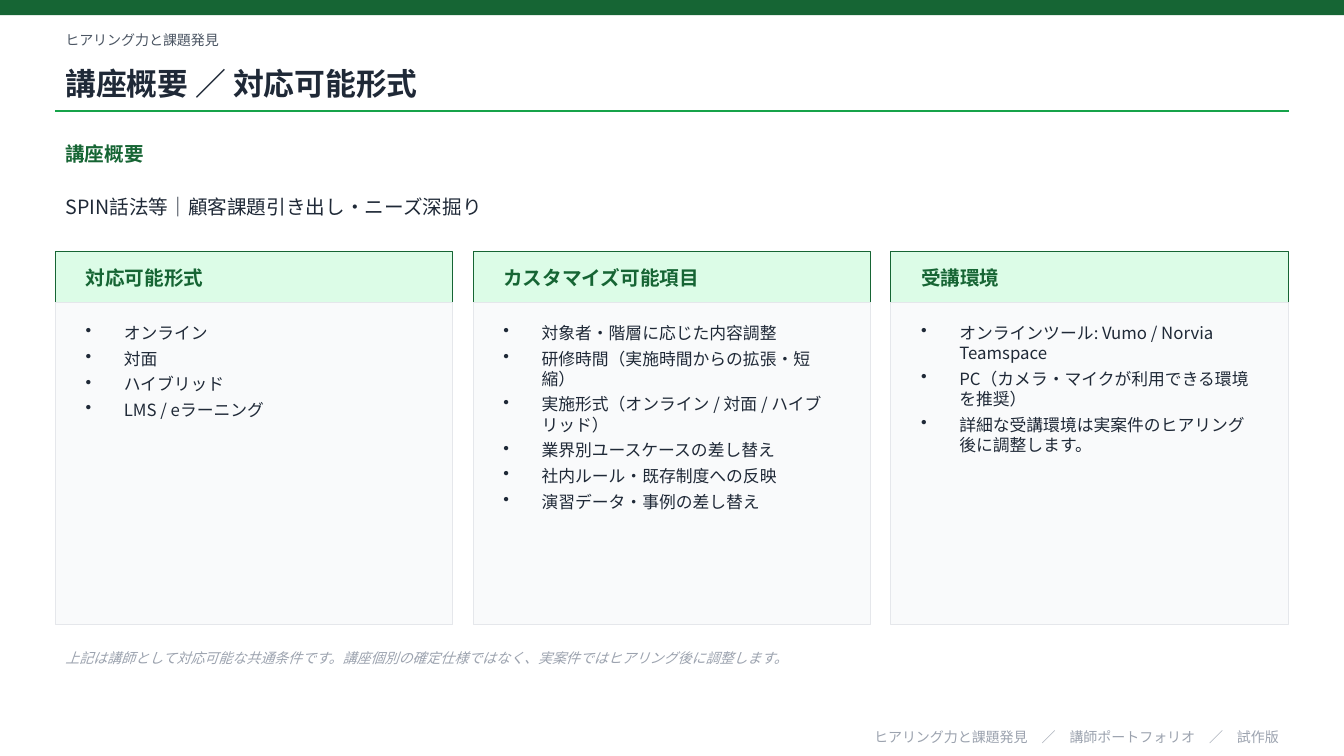
from lxml.etree import SubElement
from pptx import Presentation
from pptx.dml.color import RGBColor
from pptx.enum.shapes import MSO_CONNECTOR as Connector, MSO_SHAPE as Shape
from pptx.enum.text import MSO_ANCHOR as Anchor, PP_ALIGN as Align
from pptx.oxml.ns import qn
from pptx.util import Inches, Pt

DARK_GREEN = RGBColor(0x16, 0x65, 0x34)
GREEN = RGBColor(0x16, 0xA3, 0x4A)
PALE_GREEN = RGBColor(0xDC, 0xFC, 0xE7)
INK = RGBColor(0x1F, 0x29, 0x37)
SLATE = RGBColor(0x4B, 0x55, 0x63)
GRAY = RGBColor(0x9C, 0xA3, 0xAF)
BORDER = RGBColor(0xE5, 0xE7, 0xEB)
PANEL = RGBColor(0xF9, 0xFA, 0xFB)

FONT = "Noto Sans CJK JP"
COLUMNS = 3
MARGIN, GUTTER = Inches(0.55), Inches(0.2)
ROW = Inches(0.05)
CARD_PADDING = Inches(0.2)
BULLET_INDENT = Inches(0.38)

CARDS = [
    ("対応可能形式", ["オンライン", "対面", "ハイブリッド", "LMS / eラーニング"]),
    ("カスタマイズ可能項目", [
        "対象者・階層に応じた内容調整",
        "研修時間（実施時間からの拡張・短縮）",
        "実施形式（オンライン / 対面 / ハイブリッド）",
        "業界別ユースケースの差し替え",
        "社内ルール・既存制度への反映",
        "演習データ・事例の差し替え",
    ]),
    ("受講環境", [
        "オンラインツール: Vumo / Norvia Teamspace",
        "PC（カメラ・マイクが利用できる環境を推奨）",
        "詳細な受講環境は実案件のヒアリング後に調整します。",
    ]),
]


class CourseSlide:
    """Places elements on a grid of three columns and 0.05-inch rows."""

    def __init__(self, deck):
        self.page = deck.slides.add_slide(deck.slide_layouts[6])
        self.width = deck.slide_width
        content = self.width - 2 * MARGIN
        self.column = (content - (COLUMNS - 1) * GUTTER) // COLUMNS

    def area(self, column, row, span, rows, padding=0):
        left = MARGIN + column * (self.column + GUTTER) + padding
        width = span * self.column + (span - 1) * GUTTER - 2 * padding
        return left, int(row * ROW), width, int(rows * ROW)

    def rectangle(self, area, fill, line=None):
        shape = self.page.shapes.add_shape(Shape.RECTANGLE, *area)
        shape.shadow.inherit = False
        shape.fill.solid()
        shape.fill.fore_color.rgb = fill
        if line is None:
            shape.line.fill.background()
        else:
            shape.line.color.rgb = line
            shape.line.width = Pt(0.75)

    def top_bar(self, rows):
        self.rectangle((0, 0, self.width, rows * ROW), DARK_GREEN)

    def rule(self, row):
        left, top, width, _ = self.area(0, row, COLUMNS, 0)
        line = self.page.shapes.add_connector(
            Connector.STRAIGHT, left, top, left + width, top)
        line.line.color.rgb = GREEN
        line.line.width = Pt(1)
        SubElement(line._element.spPr, qn("a:effectLst"))

    def text(self, area, lines, size, color, bold=False, italic=False,
             align=None, anchor=Anchor.MIDDLE, bullets=False):
        frame = self.page.shapes.add_textbox(*area).text_frame
        frame.word_wrap = True
        frame.vertical_anchor = anchor
        frame.text = "\n".join(lines)
        for para in frame.paragraphs:
            if align is not None:
                para.alignment = align
            if bullets:
                self.bullet(para)
            para.font.size = Pt(size)
            para.font.bold = bold
            para.font.italic = italic
            para.font.color.rgb = color
            para.font.name = FONT
            style = para._p.pPr.find(qn("a:defRPr"))
            SubElement(style, qn("a:ea"), typeface=FONT)

    def bullet(self, para):
        para.space_after = Pt(4)
        properties = para._p.get_or_add_pPr()
        properties.set("marL", str(BULLET_INDENT))
        properties.set("indent", str(-BULLET_INDENT))
        SubElement(properties, qn("a:buChar"), char="•")

    def band(self, row, rows, line, size, color, **style):
        """Text across all columns."""
        self.text(self.area(0, row, COLUMNS, rows), [line], size, color, **style)

    def card(self, column, heading, items):
        self.rectangle(self.area(column, 50, 1, 10), PALE_GREEN, DARK_GREEN)
        self.text(self.area(column, 50, 1, 10, CARD_PADDING), [heading],
                  14, DARK_GREEN, bold=True)
        self.rectangle(self.area(column, 60, 1, 64), PANEL, BORDER)
        self.text(self.area(column, 63, 1, 57, CARD_PADDING), items,
                  12, INK, anchor=Anchor.TOP, bullets=True)


def main():
    deck = Presentation()
    deck.slide_width, deck.slide_height = Inches(13.33), Inches(7.5)
    slide = CourseSlide(deck)
    slide.top_bar(3)
    slide.band(5, 6, "ヒアリング力と課題発見", 10, SLATE)
    slide.band(11, 11, "講座概要 ／ 対応可能形式", 22, INK, bold=True)
    slide.rule(22)
    slide.band(27, 7, "講座概要", 14, DARK_GREEN, bold=True)
    slide.band(35, 12, "SPIN話法等｜顧客課題引き出し・ニーズ深掘り", 14, INK)
    for column, (heading, items) in enumerate(CARDS):
        slide.card(column, heading, items)
    slide.band(127, 7, "上記は講師として対応可能な共通条件です。講座個別の確定仕様ではなく、"
               "実案件ではヒアリング後に調整します。", 10, GRAY, italic=True)
    slide.band(144, 4.4, "ヒアリング力と課題発見　／　講師ポートフォリオ　／　試作版",
               10, GRAY, align=Align.RIGHT)
    deck.save("out.pptx")


if __name__ == "__main__":
    main()
